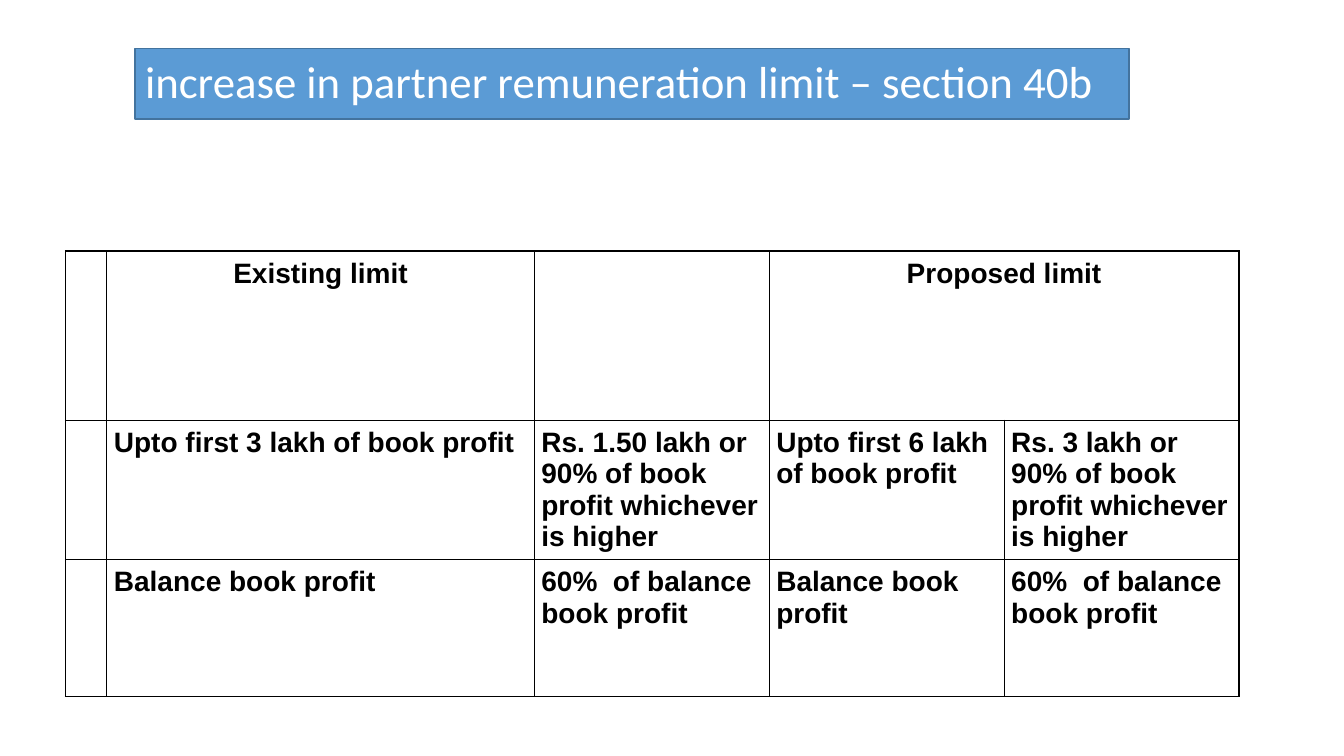
from lxml import etree
from pptx import Presentation
from pptx.dml.color import RGBColor
from pptx.enum.shapes import MSO_SHAPE
from pptx.enum.text import MSO_ANCHOR, PP_ALIGN
from pptx.oxml.ns import qn
from pptx.util import Inches, Pt

RECTANGLE = MSO_SHAPE.RECTANGLE
MIDDLE = MSO_ANCHOR.MIDDLE
LEFT, CENTER = PP_ALIGN.LEFT, PP_ALIGN.CENTER


def color(hex_string):
    return RGBColor.from_string(hex_string)


def add_borders(cell):
    properties = cell._tc.get_or_add_tcPr()
    for position, side in enumerate(("lnL", "lnR", "lnT", "lnB")):
        border = etree.Element(qn(f"a:{side}"), w=str(Pt(1)))
        fill = etree.SubElement(border, qn("a:solidFill"))
        etree.SubElement(fill, qn("a:srgbClr"), val="000000")
        properties.insert(position, border)


prs = Presentation()
prs.slide_width = Inches(13.33)
prs.slide_height = Inches(7.5)
slide = prs.slides.add_slide(prs.slide_layouts[6])

title = slide.shapes.add_shape(
    RECTANGLE, Inches(1.34), Inches(0.48), Inches(9.86), Inches(0.7))
title.shadow.inherit = False
title.fill.solid()
title.fill.fore_color.rgb = color("5B9BD5")
title.line.color.rgb = color("43739E")
title.line.width = Pt(1)
title.text_frame.word_wrap = True
title.text_frame.vertical_anchor = MIDDLE
title.text_frame.text = "increase in partner remuneration limit – section 40b"
heading = title.text_frame.paragraphs[0]
heading.alignment = LEFT
heading.line_spacing = 0.9
heading.font.name = "Calibri"
heading.font.size = Pt(32)
heading.font.color.rgb = color("FFFFFF")

column_widths = [0.41, 4.24, 2.33, 2.33, 2.33]
row_heights = [1.68, 1.38, 1.36]
limit_rows = [
    ["", "Existing limit", "", "Proposed limit", ""],
    ["", "Upto first 3 lakh of book profit",
     "Rs. 1.50 lakh or 90% of book profit whichever is higher",
     "Upto first 6 lakh of book profit",
     "Rs. 3 lakh or 90% of book profit whichever is higher"],
    ["", "Balance book profit", "60%  of balance book profit",
     "Balance book profit", "60%  of balance book profit"],
]

limits = slide.shapes.add_table(
    len(row_heights), len(column_widths), Inches(0.65), Inches(2.49),
    Inches(sum(column_widths)), Inches(sum(row_heights))).table
limits.first_row = False
limits.horz_banding = False
for column, width in zip(limits.columns, column_widths):
    column.width = Inches(width)
for row, height in zip(limits.rows, row_heights):
    row.height = Inches(height)

for row_index, texts in enumerate(limit_rows):
    for column_index, text in enumerate(texts):
        cell = limits.cell(row_index, column_index)
        cell.fill.background()
        add_borders(cell)
        cell.margin_left = cell.margin_right = Inches(0.07)
        cell.margin_top = cell.margin_bottom = Inches(0.07)
        cell.text = text
        paragraph = cell.text_frame.paragraphs[0]
        paragraph.alignment = CENTER if row_index == 0 else LEFT
        paragraph.font.name = "Arial"
        paragraph.font.size = Pt(20)
        paragraph.font.bold = True
        paragraph.font.color.rgb = color("000000")
limits.cell(0, 3).merge(limits.cell(0, 4))

prs.save("out.pptx")
